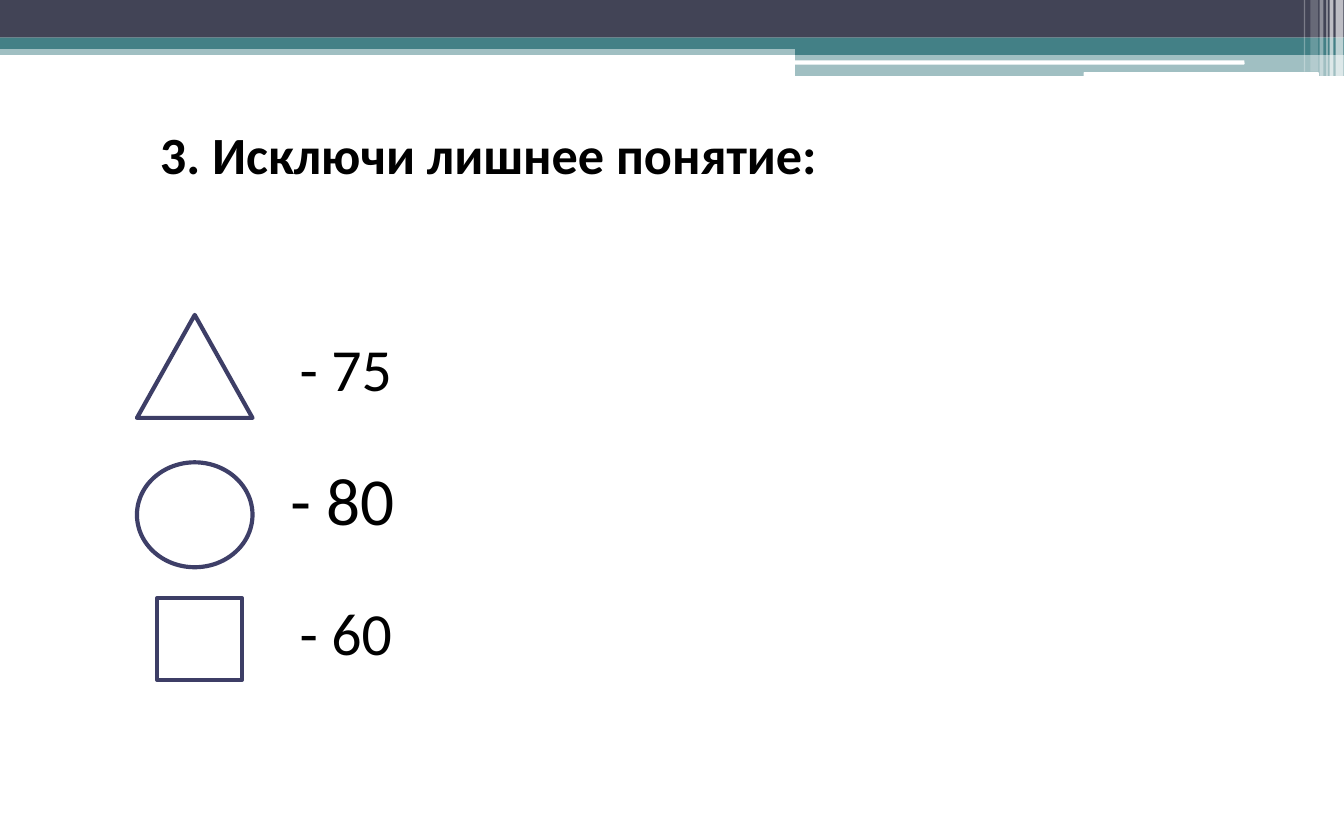
from lxml import etree
from pptx import Presentation
from pptx.dml.color import RGBColor
from pptx.enum.shapes import MSO_SHAPE
from pptx.enum.text import MSO_ANCHOR, PP_ALIGN
from pptx.oxml.ns import qn
from pptx.util import Pt

RECT, ROUND = MSO_SHAPE.RECTANGLE, MSO_SHAPE.ROUNDED_RECTANGLE
TRIANGLE, OVAL = MSO_SHAPE.ISOSCELES_TRIANGLE, MSO_SHAPE.OVAL
LEFT, TOP = PP_ALIGN.LEFT, MSO_ANCHOR.TOP

THEME = {
    "font": "Calibri", "title": 28, "value": 32, "value_large": 36, "outline": 2.25,
    "text": "000000", "navy": "424456", "teal": "438086", "white": "FFFFFF",
    "figure": "3D3E66", "ellipse": "3E3F68",
}
WIDTH, HEIGHT = 720, 450

HEADING = ("3. Исключи лишнее понятие:", (78.5, 61.9, 377.3, 41))

BANDS = [
    (RECT, (0, 24, WIDTH, 5.5), "teal", 50),
    (RECT, (0, 0, WIDTH, 20.2), "navy", 100),
    (RECT, (0, 20.2, WIDTH, 6), "teal", 100),
    (RECT, (426, 24, 294, 5.5), "teal", 100),
    (RECT, (426, 29.2, 294, 11.5), "teal", 50),
    (ROUND, (425.5, 32.4, 241.2, 2.2), "white", 100),
    (ROUND, (580.5, 38.7, 126, 2.2), "white", 100),
]
STREAKS = [
    (715.5, 4.2, 40.8, 65), (712.3, 2, 40.8, 65), (710.5, 0.72, 40.8, 60),
    (707, 2, 40.8, 40), (702, 4.2, 38.4, 20), (698.5, 0.72, 38.4, 30),
]
FIGURES = [
    (TRIANGLE, (73.4, 168.7, 61.9, 55.2), "figure",
     " - 75", (146.2, 174.3, 72, 46), "value"),
    (OVAL, (73.4, 247.7, 61.9, 56.2), "ellipse",
     " - 80", (140.4, 242, 79.2, 51), "value_large"),
    (RECT, (84.2, 320.4, 45.4, 43.9), "figure",
     " - 60", (146.2, 315.4, 72, 46), "value"),
]


def colour(name):
    return RGBColor.from_string(THEME[name])


def place(item, box):
    item.left, item.top, item.width, item.height = map(Pt, box)


def add_band(slide, kind, box, tint, opacity):
    band = slide.shapes.add_shape(kind, *map(Pt, box))
    band.shadow.inherit = False
    band.line.fill.background()
    band.fill.solid()
    band.fill.fore_color.rgb = colour(tint)
    if opacity < 100:
        tint_xml = next(band.element.spPr.iter(qn("a:srgbClr")))
        etree.SubElement(tint_xml, qn("a:alpha")).set("val", str(opacity * 1000))


def add_figure(slide, kind, box, tint):
    figure = slide.shapes.add_shape(kind, *map(Pt, box))
    figure.shadow.inherit = False
    figure.fill.background()
    figure.line.color.rgb = colour(tint)
    figure.line.width = Pt(THEME["outline"])


def write(holder, text, size, bold=False):
    frame = holder.text_frame
    frame.text = text
    frame.word_wrap = False
    frame.vertical_anchor = TOP
    paragraph = frame.paragraphs[0]
    paragraph.alignment = LEFT
    font = paragraph.runs[0].font
    font.name, font.size, font.bold = THEME["font"], Pt(THEME[size]), bold
    font.color.rgb = colour("text")


def main():
    deck = Presentation()
    deck.slide_width, deck.slide_height = Pt(WIDTH), Pt(HEIGHT)
    slide = deck.slides.add_slide(deck.slide_layouts[5])

    for band in BANDS:
        add_band(slide, *band)
    for left, width, height, opacity in STREAKS:
        add_band(slide, RECT, (left, 0, width, height), "white", opacity)

    heading, heading_box = HEADING
    place(slide.shapes.title, heading_box)
    write(slide.shapes.title, heading, "title", bold=True)

    for kind, box, tint, value, value_box, size in FIGURES:
        add_figure(slide, kind, box, tint)
        write(slide.shapes.add_textbox(*map(Pt, value_box)), value, size)

    deck.save("out.pptx")


if __name__ == "__main__":
    main()
